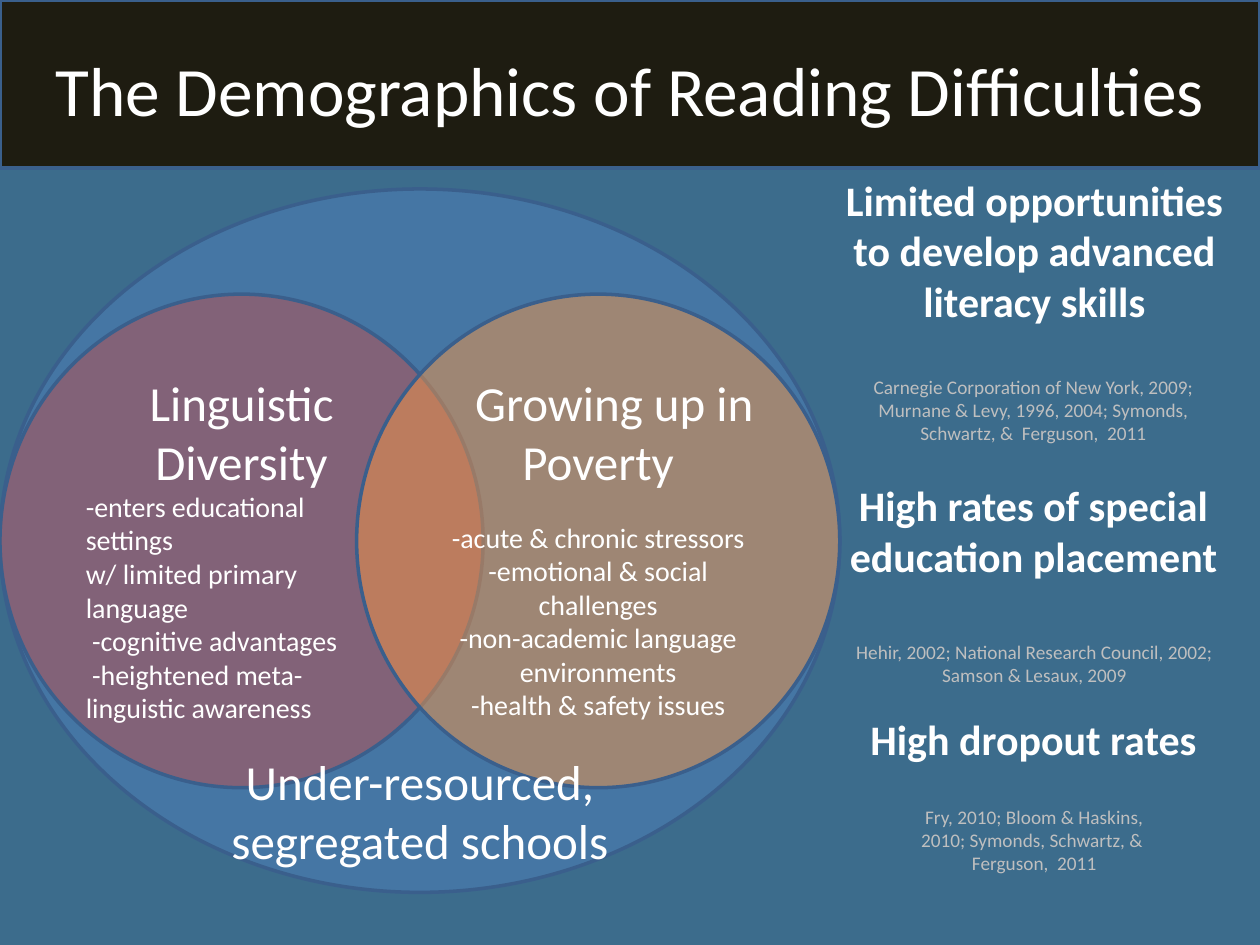
"""Builds a slide on the demographics of reading difficulties."""
import pptx
import pptx.util
import pptx.dml.color
import pptx.enum.shapes
import pptx.enum.text
import lxml.etree
from pptx.oxml.ns import qn

Cm, Pt = pptx.util.Cm, pptx.util.Pt
SHAPE = pptx.enum.shapes.MSO_SHAPE
ALIGN = pptx.enum.text.PP_ALIGN
ANCHOR = pptx.enum.text.MSO_ANCHOR
AUTO = pptx.enum.text.MSO_AUTO_SIZE

COLORS = {
    "background": "3C6C8C", "banner": "1E1C11", "outline": "3A5F8C",
    "schools": "4F81BD", "language": "C0504D", "poverty": "F79646",
    "text": "FFFFFF", "source": "BFBFBF",
}
TITLE = "The Demographics of Reading Difficulties"
SCHOOLS = "Under-resourced, segregated schools"
LANGUAGE = "Linguistic Diversity"
LANGUAGE_POINTS = [
    "-enters educational settings",
    "w/ limited primary language",
    " -cognitive advantages",
    " -heightened meta-\vlinguistic awareness",
]
POVERTY = "Growing up in Poverty"
POVERTY_POINTS = [
    "-acute & chronic stressors",
    "-emotional & social challenges",
    "-non-academic language environments",
    "-health & safety issues",
]
OUTCOMES = [
    ("Limited opportunities to develop advanced literacy skills", (16.51, 3.39, 8.69, 3.33),
     "Carnegie Corporation of New York, 2009; Murnane & Levy, 1996, 2004; "
     "Symonds, Schwartz, &  Ferguson,  2011", (16.81, 7.44, 8.05, 1.68)),
    ("High rates of special education placement", (16.81, 9.55, 8.05, 2.31),
     "Hehir, 2002; National Research Council, 2002; Samson & Lesaux, 2009",
     (16.94, 12.78, 7.83, 1.19)),
    ("High dropout rates", (16.81, 14.25, 8.05, 1.27),
     "Fry, 2010; Bloom & Haskins, 2010; Symonds, Schwartz, &  Ferguson,  2011",
     (17.99, 16.1, 5.72, 1.68)),
]
CIRCLE_TOP, CIRCLE_W, CIRCLE_H = 5.93, 9.74, 9.95
SCHOOLS_W = 16.93


def rgb(name):
    return pptx.dml.color.RGBColor.from_string(COLORS[name])


def write(tf, text, size=28, color="text", bold=False, align=ALIGN.CENTER,
          before=0, indent=0, new=False):
    p = tf.add_paragraph() if new else tf.paragraphs[0]
    p.text = text
    p.alignment = align
    if indent:
        p._p.get_or_add_pPr().set("indent", str(Cm(indent)))
    if before:
        p.space_before = Pt(before)
    for r in p.runs:
        r.font.size, r.font.bold, r.font.name = Pt(size), bold, "Calibri"
        r.font.color.rgb = rgb(color)


def add_shape(slide, kind, box, fill, alpha=None):
    sp = slide.shapes.add_shape(kind, *map(Cm, box))
    sp.shadow.inherit = False
    sp.fill.solid()
    sp.fill.fore_color.rgb = rgb(fill)
    if alpha:
        color = sp._element.spPr.find(qn("a:solidFill"))[0]
        lxml.etree.SubElement(color, qn("a:alpha")).set("val", str(alpha * 1000))
    sp.line.color.rgb = rgb("outline")
    sp.line.width = Pt(2)
    sp.text_frame.word_wrap = True
    sp.text_frame.vertical_anchor = ANCHOR.TOP
    return sp.text_frame


def add_box(slide, box, anchor=ANCHOR.TOP, auto=AUTO.SHAPE_TO_FIT_TEXT):
    tf = slide.shapes.add_textbox(*map(Cm, box)).text_frame
    tf.word_wrap = True
    tf.auto_size = auto
    tf.vertical_anchor = anchor
    return tf


def main():
    prs = pptx.Presentation()
    prs.slide_width, prs.slide_height = Cm(25.4), Cm(19.05)
    slide = prs.slides.add_slide(prs.slide_layouts[6])
    slide.background.fill.solid()
    slide.background.fill.fore_color.rgb = rgb("background")

    add_shape(slide, SHAPE.RECTANGLE, (0, 0, 25.4, 3.39), "banner")
    add_shape(slide, SHAPE.OVAL, (0, 3.81, SCHOOLS_W, 14.18), "schools", 50)
    write(add_box(slide, (0.85, 0.21, 23.71, 3.18), ANCHOR.MIDDLE, AUTO.NONE), TITLE, size=39.6)

    tf = add_shape(slide, SHAPE.OVAL, (0, CIRCLE_TOP, CIRCLE_W, CIRCLE_H), "language", 50)
    write(tf, LANGUAGE)
    tf = add_shape(slide, SHAPE.OVAL, (SCHOOLS_W - CIRCLE_W, CIRCLE_TOP, CIRCLE_W, CIRCLE_H),
                   "poverty", 50)
    write(tf, POVERTY, indent=0.65)
    for i, point in enumerate(POVERTY_POINTS):
        write(tf, point, size=16, before=0 if i else 17, new=True)

    write(add_box(slide, (4.23, 15.03, 8.47, 2.65)), SCHOOLS)
    for heading, heading_box, source, source_box in OUTCOMES:
        write(add_box(slide, heading_box), heading, size=24, bold=True)
        write(add_box(slide, source_box), source, size=11, color="source")

    tf = add_box(slide, (1.48, 9.74, 6.77, 5.74))
    for i, point in enumerate(LANGUAGE_POINTS):
        write(tf, point, size=16, align=ALIGN.LEFT, new=i > 0)

    prs.save("out.pptx")


if __name__ == "__main__":
    main()
